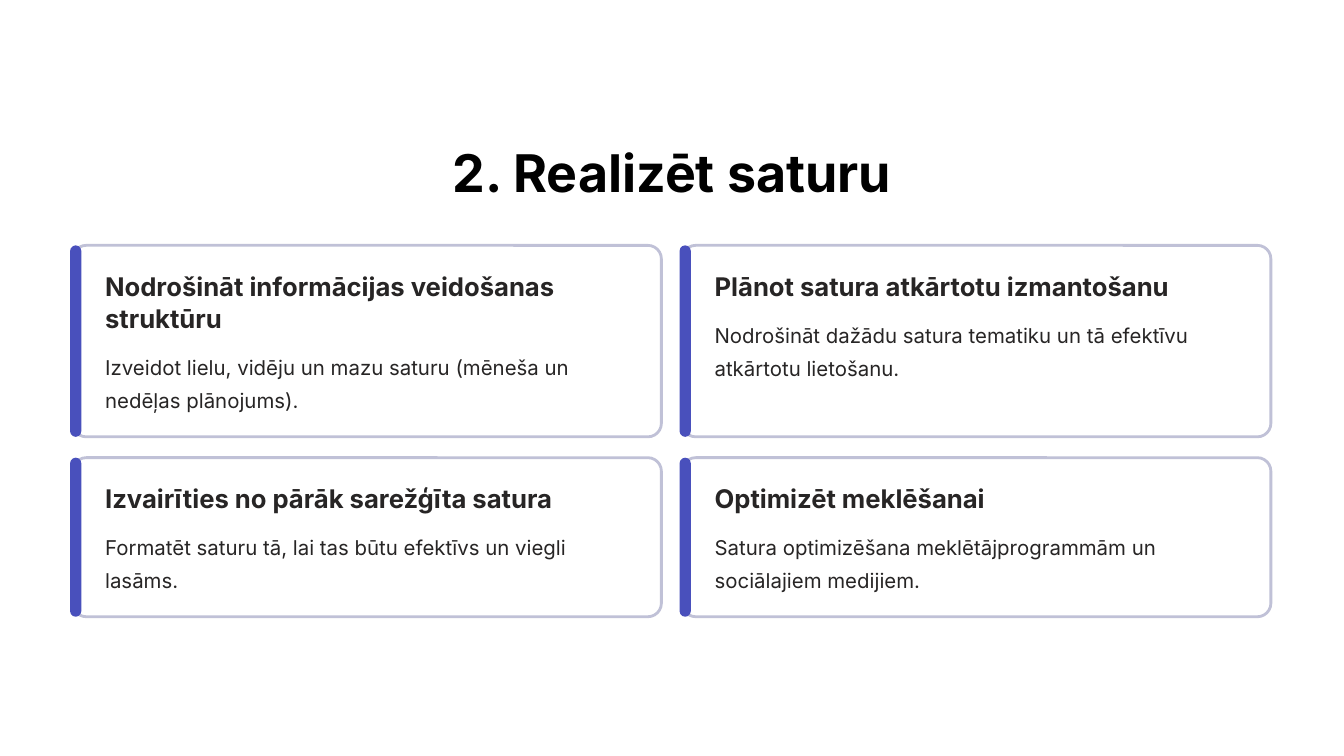
from pptx import Presentation
from pptx.dml.color import RGBColor
from pptx.enum import shapes, text
from pptx.util import Cm, Pt

TITLE = "2. Realizēt saturu"
# Each row: lines its tallest heading takes, then (heading, heading lines, body) cards
ROWS = [
    (2, [
        ("Nodrošināt informācijas veidošanas struktūru", 2,
         "Izveidot lielu, vidēju un mazu saturu (mēneša un nedēļas plānojums)."),
        ("Plānot satura atkārtotu izmantošanu", 1,
         "Nodrošināt dažādu satura tematiku un tā efektīvu atkārtotu lietošanu."),
    ]),
    (1, [
        ("Izvairīties no pārāk sarežģīta satura", 1,
         "Formatēt saturu tā, lai tas būtu efektīvs un viegli lasāms."),
        ("Optimizēt meklēšanai", 1,
         "Satura optimizēšana meklētājprogrammām un sociālajiem medijiem."),
    ]),
]

FONT = "Inter"
BLACK = RGBColor(0x00, 0x00, 0x00)
WHITE = RGBColor(0xFF, 0xFF, 0xFF)
INK = RGBColor(0x27, 0x25, 0x25)
BORDER = RGBColor(0xC0, 0xC1, 0xD7)
ACCENT = RGBColor(0x49, 0x50, 0xBC)

# Lengths in centimetres
LEFT, TOP = 2.12, 7.42
PITCH, ROW_GAP = 18.43, 0.63
CARD_W, CARD_DX, BAR_W, RADIUS = 17.8, 0.08, 0.34, 0.41
TEXT_DX, TEXT_W, PAD = 1.06, 16.13, 0.73
HEADING_LINE, HEADING_GAP, BODY_H = 0.98, 0.37, 2.0


def write(sp, words, size, spacing, color=INK, bold=False,
          align=text.PP_ALIGN.LEFT, wrap=True):
    tf = sp.text_frame
    tf.margin_left = tf.margin_top = tf.margin_right = tf.margin_bottom = 0
    tf.word_wrap = wrap
    tf.auto_size = text.MSO_AUTO_SIZE.NONE
    tf.vertical_anchor = text.MSO_ANCHOR.TOP
    p = tf.paragraphs[0]
    p.alignment = align
    p.line_spacing = Pt(spacing)
    p.space_before = Pt(0)
    r = p.add_run()
    r.text = words
    r.font.name, r.font.size, r.font.bold = FONT, Pt(size), bold
    r.font.color.rgb = color


def add_round(s, x, y, w, h, radius, fill, line=None):
    sp = s.shapes.add_shape(shapes.MSO_SHAPE.ROUNDED_RECTANGLE,
                            Cm(x), Cm(y), Cm(w), Cm(h))
    sp.shadow.inherit = False
    sp.adjustments[0] = min(radius / min(w, h), 0.5)
    sp.fill.solid()
    sp.fill.fore_color.rgb = fill
    if line is None:
        sp.line.fill.background()
    else:
        sp.line.color.rgb = line
        sp.line.width = Pt(2.4)


def add_card(s, x, y, h, heading, lines, body):
    add_round(s, x + CARD_DX, y, CARD_W, h, RADIUS, WHITE, BORDER)
    add_round(s, x, y, BAR_W, h, RADIUS, ACCENT)
    heading_h = lines * HEADING_LINE
    blocks = [
        (heading, PAD, heading_h, dict(size=22, spacing=27.5, bold=True)),
        (body, PAD + heading_h + HEADING_GAP, BODY_H,
         dict(size=17.5, spacing=28.5)),
    ]
    for words, dy, block_h, style in blocks:
        box = s.shapes.add_textbox(Cm(x + TEXT_DX), Cm(y + dy),
                                   Cm(TEXT_W), Cm(block_h))
        write(box, words, **style)


def main():
    prs = Presentation()
    prs.slide_width, prs.slide_height = Cm(40.64), Cm(22.86)
    s = prs.slides.add_slide(prs.slide_layouts[5])
    s.background.fill.solid()
    s.background.fill.fore_color.rgb = WHITE

    title = s.shapes.title
    title.left, title.top = Cm(12.45), Cm(4.19)
    title.width, title.height = Cm(15.75), Cm(1.98)
    write(title, TITLE, size=44.5, spacing=55.5, color=BLACK, bold=True,
          align=text.PP_ALIGN.CENTER, wrap=False)

    y = TOP
    for row_lines, cards in ROWS:
        h = 2 * PAD + row_lines * HEADING_LINE + HEADING_GAP + BODY_H
        for col, card in enumerate(cards):
            add_card(s, LEFT + col * PITCH, y, h, *card)
        y += h + ROW_GAP

    prs.save("out.pptx")


if __name__ == "__main__":
    main()
